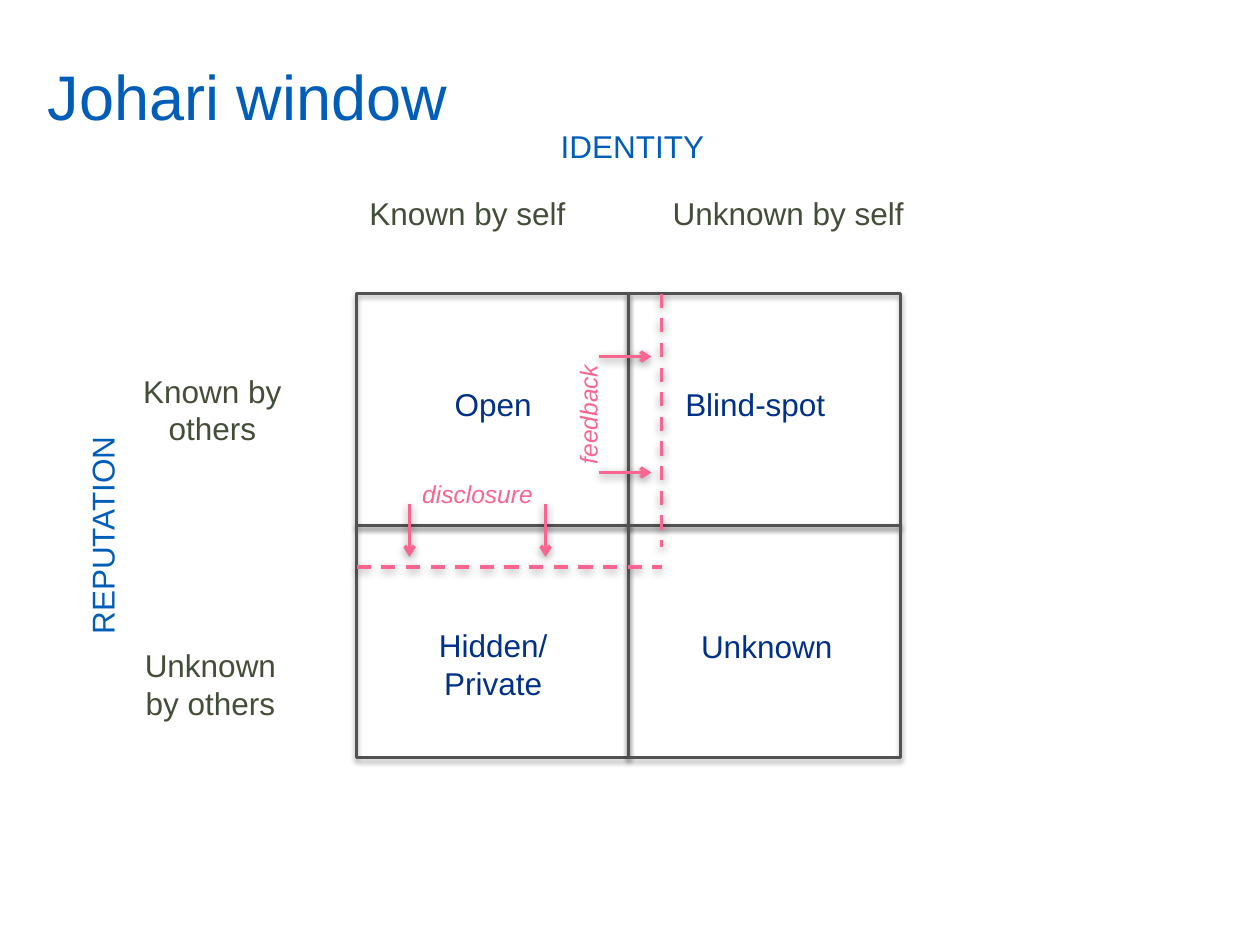
from itertools import product
from lxml.etree import SubElement
from pptx import Presentation
from pptx.dml.color import RGBColor as RGB
from pptx.enum.dml import MSO_LINE as DASH
from pptx.enum.shapes import MSO_CONNECTOR as LINE, MSO_SHAPE as SHAPE
from pptx.enum.text import MSO_ANCHOR as ANCHOR, PP_ALIGN as ALIGN
from pptx.oxml.ns import qn
from pptx.util import Inches as In, Pt

BLUE = RGB(0x00, 0x5E, 0xB8)
NAVY = RGB(0x00, 0x30, 0x87)
OLIVE = RGB(0x43, 0x4E, 0x38)
GREY = RGB(0x52, 0x52, 0x52)
PINK = RGB(0xF9, 0x65, 0x8E)

# The window: two columns and two rows
LEFT, TOP = 2.83, 2.33
COL, ROW = 2.16, 1.84

prs = Presentation()
prs.slide_width, prs.slide_height = In(10), In(7.5)
slide = prs.slides.add_slide(prs.slide_layouts[6])
shapes = slide.shapes


def write(text, x, y, w, h, color, size=18, pad=True):
    """Add a centred text box, one paragraph for each line of text."""
    box = shapes.add_textbox(In(x), In(y), In(w), In(h))
    frame = box.text_frame
    frame.word_wrap = True
    if not pad:
        frame.margin_left = frame.margin_right = 0
        frame.margin_top = frame.margin_bottom = 0
    frame.text = text
    for para in frame.paragraphs:
        para.alignment = ALIGN.CENTER
        font = para.font
        font.name, font.size = "Arial", Pt(size)
        font.color.rgb = color
    return box


def shade(shape, blur, dist, alpha):
    """Give the shape a soft black shadow straight below it."""
    props = shape._element.spPr
    effects = props.find(qn("a:effectLst"))
    if effects is None:
        effects = SubElement(props, qn("a:effectLst"))
    drop = SubElement(effects, qn("a:outerShdw"), blurRad=str(Pt(blur)),
                      dist=str(Pt(dist)), dir="5400000", rotWithShape="0")
    black = SubElement(drop, qn("a:srgbClr"), val="000000")
    SubElement(black, qn("a:alpha"), val=str(alpha * 1000))


# Title and axis names
title = write("Johari window", 0.28, 0.29, 9.07, 0.94, BLUE, 36)
title.text_frame.vertical_anchor = ANCHOR.MIDDLE
title.text_frame.paragraphs[0].alignment = ALIGN.LEFT
write("IDENTITY", 3.45, 1.01, 3.14, 0.3, BLUE, pad=False)
side = write("REPUTATION", 0.66, 2.98, 0.3, 2.54, BLUE, pad=False)
side.text_frame._txBody.bodyPr.set("vert", "vert270")

# Column and row headings
for text, x, y, w, h in (
    ("Known by self", 2.75, 1.49, 1.92, 0.4),
    ("Unknown by self", 5.17, 1.49, 2.17, 0.4),
    ("Known by others", 0.86, 2.9, 1.65, 0.71),
    ("Unknown by others", 0.95, 5.08, 1.44, 0.71),
):
    write(text, x, y, w, h, OLIVE)

# Panes
for row, col in product(range(2), repeat=2):
    pane = shapes.add_shape(SHAPE.RECTANGLE, In(LEFT + col * COL),
                            In(TOP + row * ROW), In(COL), In(ROW))
    pane.fill.background()
    pane.line.color.rgb = GREY
    pane.line.width = Pt(1.75)
    pane.shadow.inherit = False
    shade(pane, 3.1, 1.8, 35)

for text, x, y, h in (
    ("Open", 3, 3.01, 0.4),
    ("Blind-spot", 5.08, 3.01, 0.4),
    ("Hidden/\nPrivate", 3, 4.92, 0.71),
    ("Unknown", 5.17, 4.93, 0.4),
):
    write(text, x, y, 1.83, h, NAVY)

# Moved borders (dashed) and the arrows that push them
for x1, y1, x2, y2, dashed in (
    (LEFT, 4.5, 5.25, 4.5, True),
    (5.25, TOP, 5.25, 4.34, True),
    (3.25, 4, 3.25, 4.42, False),
    (4.33, 4, 4.33, 4.42, False),
    (4.75, 3.75, 5.17, 3.75, False),
    (4.75, 2.83, 5.17, 2.83, False),
):
    rule = shapes.add_connector(LINE.STRAIGHT, In(x1), In(y1), In(x2), In(y2))
    rule.line.color.rgb = PINK
    rule.line.width = Pt(2)
    if dashed:
        rule.line.dash_style = DASH.DASH
    else:
        SubElement(rule.line._get_or_add_ln(), qn("a:tailEnd"), type="arrow")
    shade(rule, 5, 1.6, 38)

for text, x, y, turn in (
    ("feedback", 3.71, 3.12, 270),
    ("disclosure", LEFT, 3.75, 0),
):
    note = write(text, x, y, 1.92, 0.34, PINK, 14)
    note.rotation = turn
    note.text_frame.paragraphs[0].font.italic = True

prs.save("out.pptx")
